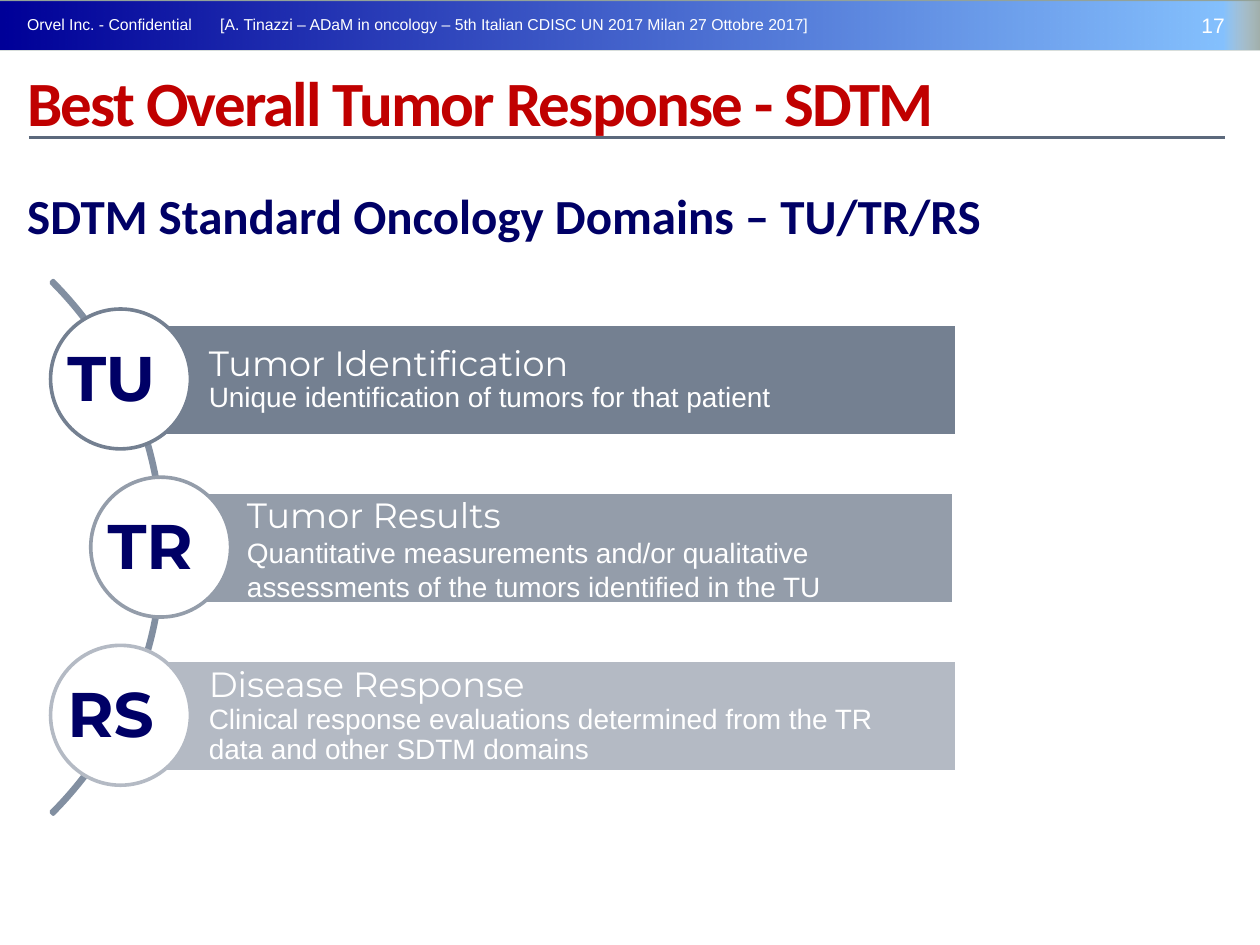
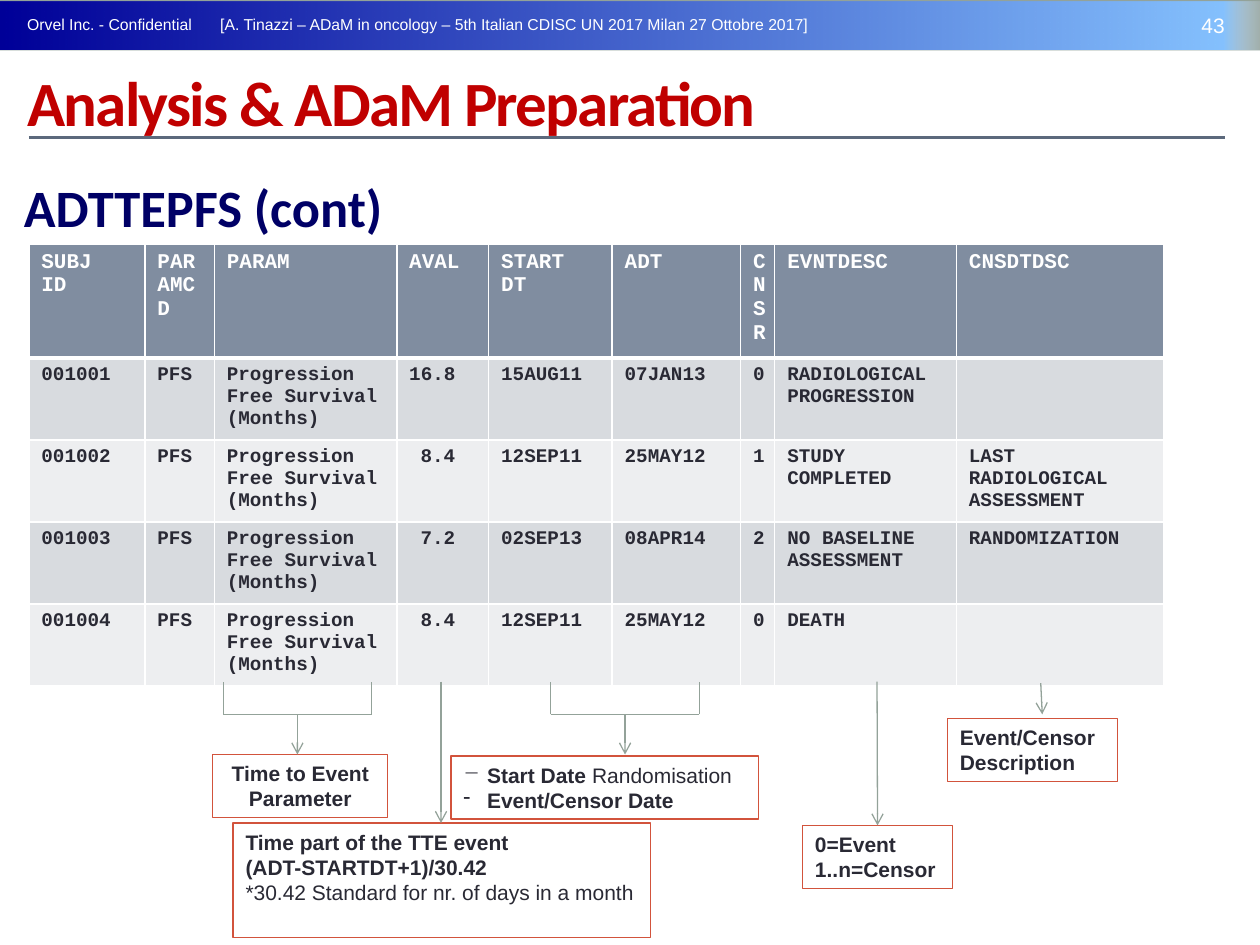
from dataclasses import dataclass, replace

from pptx import Presentation
from pptx import oxml
from pptx import util as u
from pptx.dml.color import RGBColor
from pptx.enum import shapes, text
from pptx.oxml import ns

Cm, Pt = u.Cm, u.Pt
Kind, Align, Anchor = shapes.MSO_SHAPE, text.PP_ALIGN, text.MSO_ANCHOR


@dataclass(frozen=True)
class Type:
    font: str
    size: float
    color: str
    bold: bool = False
    tracking: float = 0


class Theme:
    white = "FFFFFF"
    ink = "292934"
    navy = "000066"
    band = "93A299"
    band_stops = ((0, "000099", 100), (97, "85C2FF", 100),
                  (100, "D7E3F1", 18), (100, "FFEBFA", 100))
    rule = "5C697C"
    arc = "828FA1"
    callout = "D2533C"
    table_head = "808DA0"
    table_rows = ("D8DBDF", "EDEEF0")

    header = Type("Arial", 9, white)
    number = Type("Arial", 12, white)
    title = Type("Calibri", 36, "C00000", True, -1)
    subtitle = Type("Calibri", 28, navy, True)
    code = Type("Montserrat", 36, navy, True)
    domain = Type("Montserrat", 20, white)
    detail = Type("Arial", 16, white)
    note = Type("Arial", 12, ink)
    note_bold = replace(note, bold=True)
    column = Type("Courier New", 12, white, True)
    value = Type("Courier New", 11, ink, True)


def lengths(*values):
    return [Cm(value) for value in values]


def style_span(span, style):
    font = span.font
    font.name, font.size, font.bold = style.font, Pt(style.size), style.bold
    font.color.rgb = RGBColor.from_string(style.color)
    if style.tracking:
        span._r.get_or_add_rPr().set("spc", str(round(style.tracking * 100)))


def write(frame, lines, align=Align.LEFT, spacing=None):
    """Fill a text frame with (text, style) pairs, one paragraph each."""
    frame.text = "\n".join(line for line, _ in lines)
    for para, (_, style) in zip(frame.paragraphs, lines):
        para.alignment = align
        if spacing:
            para.line_spacing = spacing
        for span in para.runs:
            style_span(span, style)


def add_dash(para, dash, indent):
    props = para._p.get_or_add_pPr()
    props.set("marL", str(Cm(indent)))
    props.set("indent", str(-Cm(indent)))
    bullet = oxml.parse_xml(f'<a:buChar {ns.nsdecls("a")} char="{dash}"/>')
    props.append(bullet)


def add_cell_borders(cell, bottom):
    props = cell._tc.get_or_add_tcPr()
    for side, points in (("L", 1), ("R", 1), ("T", 1), ("B", bottom)):
        props.append(oxml.parse_xml(
            f'<a:ln{side} {ns.nsdecls("a")} w="{Pt(points)}"><a:solidFill>'
            f'<a:srgbClr val="{Theme.white}"/></a:solidFill></a:ln{side}>'))


class Deck:
    def __init__(self):
        self.deck = Presentation()
        self.deck.slide_width, self.deck.slide_height = lengths(25.4, 19.05)
        self.page = None

    def new_page(self, number, title):
        self.page = self.deck.slides.add_slide(self.deck.slide_layouts[6])
        self.shape(Kind.RECTANGLE, (0, 0, 25.4, 1.02), Theme.band)
        self.gradient_band((0, 0.03, 25.4, 0.97))
        self.label((0.3, 0.18, 3.84, 0.64), "Orvel Inc. - Confidential",
                   Theme.header, wrap=False)
        self.label((23.19, 0.13, 1.75, 0.76), str(number), Theme.number,
                   align=Align.RIGHT)
        self.label((4.19, 0.18, 12.42, 0.64),
                   "[A. Tinazzi – ADaM in oncology – 5th Italian CDISC UN 2017 "
                   "Milan 27 Ottobre 2017]", Theme.header, wrap=False)
        self.label((0.3, 1.24, 25, 1.6), title, Theme.title,
                   anchor=Anchor.MIDDLE)
        self.line((0.58, 2.77), (24.69, 2.77), Theme.rule, 1.5)

    def shape(self, kind, place, fill=None, line=None, width=0.75):
        shape = self.page.shapes.add_shape(kind, *lengths(*place))
        shape.shadow.inherit = False
        if fill:
            shape.fill.solid()
            shape.fill.fore_color.rgb = RGBColor.from_string(fill)
        else:
            shape.fill.background()
        if line:
            shape.line.color.rgb = RGBColor.from_string(line)
            shape.line.width = Pt(width)
        else:
            shape.line.fill.background()
        return shape

    def gradient_band(self, place):
        band = self.shape(Kind.RECTANGLE, place)
        band.fill.gradient()
        band.fill.gradient_angle = 0
        stops = band._element.spPr.find(ns.qn("a:gradFill")).find(ns.qn("a:gsLst"))
        for stop in list(stops):
            stops.remove(stop)
        for position, color, opacity in Theme.band_stops:
            stops.append(oxml.parse_xml(
                f'<a:gs {ns.nsdecls("a")} pos="{position * 1000}">'
                f'<a:srgbClr val="{color}"><a:alpha val="{opacity * 1000}"/>'
                f'</a:srgbClr></a:gs>'))

    def label(self, place, words, style, align=Align.LEFT, anchor=Anchor.TOP,
              wrap=True):
        frame = self.page.shapes.add_textbox(*lengths(*place)).text_frame
        frame.word_wrap = wrap
        frame.vertical_anchor = anchor
        write(frame, [(words, style)], align)

    def line(self, start, end, color=Theme.band, width=0.75, arrow=False):
        line = self.page.shapes.add_connector(
            shapes.MSO_CONNECTOR.STRAIGHT, *lengths(*start, *end))
        line.line.color.rgb = RGBColor.from_string(color)
        line.line.width = Pt(width)
        if arrow:
            line.line._get_or_add_ln().append(oxml.parse_xml(
                f'<a:tailEnd {ns.nsdecls("a")} type="arrow"/>'))
        line._element.spPr.append(
            oxml.parse_xml(f'<a:effectLst {ns.nsdecls("a")}/>'))
        return line

    def domain_bar(self, place, color, name, details, spacing):
        bar = self.shape(Kind.RECTANGLE, place, color, Theme.white, 2.08)
        frame = bar.text_frame
        frame.word_wrap = True
        frame.vertical_anchor = Anchor.MIDDLE
        frame.margin_left = Cm(1.8)
        frame.margin_right = frame.margin_top = frame.margin_bottom = Cm(0.15)
        lines = [(name, Theme.domain)] + [(line, Theme.detail) for line in details]
        write(frame, lines, spacing=spacing)

    def callout(self, place, lines, align=Align.LEFT, fill=Theme.white):
        box = self.shape(Kind.RECTANGLE, place, fill, Theme.callout)
        box.text_frame.word_wrap = True
        box.text_frame.vertical_anchor = Anchor.TOP
        write(box.text_frame, lines, align)
        return box

    def bracket(self, left, right, top=13.74, bar=14.4, tip=15.21):
        """Join two columns and point down from the middle between them."""
        middle = (left + right) / 2
        self.line((middle, bar), (middle, tip), arrow=True)
        self.line((left, bar), (right, bar))
        for side in (left, right):
            self.line((side, bar), (side, top))

    def table(self, place, widths, heights, rows):
        table = self.page.shapes.add_table(
            len(rows), len(widths), *lengths(*place)).table
        for column, width in zip(table.columns, widths):
            column.width = Cm(width)
        for index, (row, height, values) in enumerate(
                zip(table.rows, heights, rows)):
            row.height = Cm(height)
            head = index == 0
            fill = Theme.table_head if head else Theme.table_rows[(index - 1) % 2]
            style = Theme.column if head else Theme.value
            for cell, value in zip(row.cells, values):
                add_cell_borders(cell, 3 if head else 1)
                cell.fill.solid()
                cell.fill.fore_color.rgb = RGBColor.from_string(fill)
                write(cell.text_frame,
                      [(line, style) for line in value.split("\n")])
        return table


def sdtm_domains(deck):
    deck.new_page(17, "Best Overall Tumor Response - SDTM")
    deck.label((0.3, 3.61, 24, 2.16), "SDTM Standard Oncology Domains – TU/TR/RS",
               Theme.subtitle)
    arc = deck.shape(Kind.BLOCK_ARC, (-11.91, 3.43, 15.21, 15.21),
                     line=Theme.arc, width=2.08)
    for index, value in enumerate((189, 27, 0.004)):
        arc.adjustments[index] = value

    domains = (
        ("TU", "Tumor Identification",
         ["Unique identification of tumors for that patient"],
         "748091", 1.02, 2.41, 16.89, 0.9),
        ("TR", "Tumor Results",
         ["Quantitative measurements and/or qualitative",
          "assessments of the tumors identified in the TU"],
         "949DAA", 1.83, 3.18, 16.05, 1.0),
        ("RS", "Disease Response",
         ["Clinical response evaluations determined from the TR",
          "data and other SDTM domains"],
         "B4BAC4", 1.02, 2.41, 16.89, 0.9),
    )
    for index, domain in enumerate(domains):
        code, name, details, color, circle_left, bar_left, width, spacing = domain
        top = 6.53 + 3.39 * index
        deck.domain_bar((bar_left, top, width, 2.26), color, name, details, spacing)
        deck.shape(Kind.OVAL, (circle_left, top - 0.3, 2.82, 2.82),
                   Theme.white, color, 2.08)
        deck.label((circle_left + 0.09, top + 0.17, 2.5, 1.8), code, Theme.code,
                   wrap=False)


def adttepfs(deck):
    deck.new_page(43, "Analysis & ADaM Preparation")
    deck.label((0.23, 3.4, 24, 2.16), "ADTTEPFS (cont)",
               replace(Theme.subtitle, size=30))

    param = "Progression Free Survival\n(Months)"
    subjects = (
        ("001001", "16.8", "15AUG11", "07JAN13", "0",
         "RADIOLOGICAL PROGRESSION", ""),
        ("001002", "8.4", "12SEP11", "25MAY12", "1",
         "STUDY COMPLETED", "LAST RADIOLOGICAL ASSESSMENT"),
        ("001003", "7.2", "02SEP13", "08APR14", "2",
         "NO BASELINE ASSESSMENT", "RANDOMIZATION"),
        ("001004", "8.4", "12SEP11", "25MAY12", "0", "DEATH", ""),
    )
    rows = [("SUBJ\nID", "PARAMCD", "PARAM", "AVAL", "START\nDT", "ADT", "CNSR",
             "EVNTDESC", "CNSDTDSC")]
    rows += [(subject, "PFS", param, *rest) for subject, *rest in subjects]
    widths = (2.34, 1.4, 3.68, 1.85, 2.49, 2.59, 0.69, 3.66, 4.19)
    heights = (2.15,) + (1.59,) * len(subjects)
    table = deck.table((0.58, 4.93, sum(widths), sum(heights)),
                       widths, heights, rows)
    aval = rows[0].index("AVAL")
    for index, row in enumerate(rows):
        missing_digits = 4 - len(row[aval])
        table.cell(index, aval).margin_left = Cm(0.25 + 0.23 * missing_digits)

    bold, plain = Theme.note_bold, Theme.note
    deck.callout((4.29, 15.21, 3.53, 1.27), [("Time to Event Parameter", bold)],
                 Align.CENTER)
    deck.bracket(4.5, 7.49)

    deck.callout((4.7, 16.59, 8.41, 2.31),
                 [("Time part of the TTE event", bold),
                  ("(ADT-STARTDT+1)/30.42", bold),
                  ("*30.42 Standard for nr. of days in a month", plain)], fill=None)
    deck.line((8.89, 13.74), (8.89, 16.59), arrow=True)

    dates = deck.callout((9.09, 15.24, 6.2, 1.27),
                         [("Start Date ", bold), ("Event/Censor Date", bold)])
    for para, dash in zip(dates.text_frame.paragraphs, "−-"):
        add_dash(para, dash, 0.48)
    span = dates.text_frame.paragraphs[0].add_run()
    span.text = "Randomisation"
    style_span(span, plain)
    deck.bracket(11.1, 14.1)

    censor = deck.callout((16.18, 16.64, 3.02, 1.27),
                          [("0=Event", bold), ("1..n=Censor", bold)])
    arrow = deck.line((17.68, 13.74), (17.69, 16.64), arrow=True)
    arrow.end_connect(censor, 0)

    deck.callout((19.1, 14.48, 3.43, 1.27), [("Event/Censor Description", bold)])
    deck.line((20.98, 13.77), (21.01, 14.4), arrow=True)


def main():
    deck = Deck()
    sdtm_domains(deck)
    adttepfs(deck)
    deck.deck.save("out.pptx")


if __name__ == "__main__":
    main()
